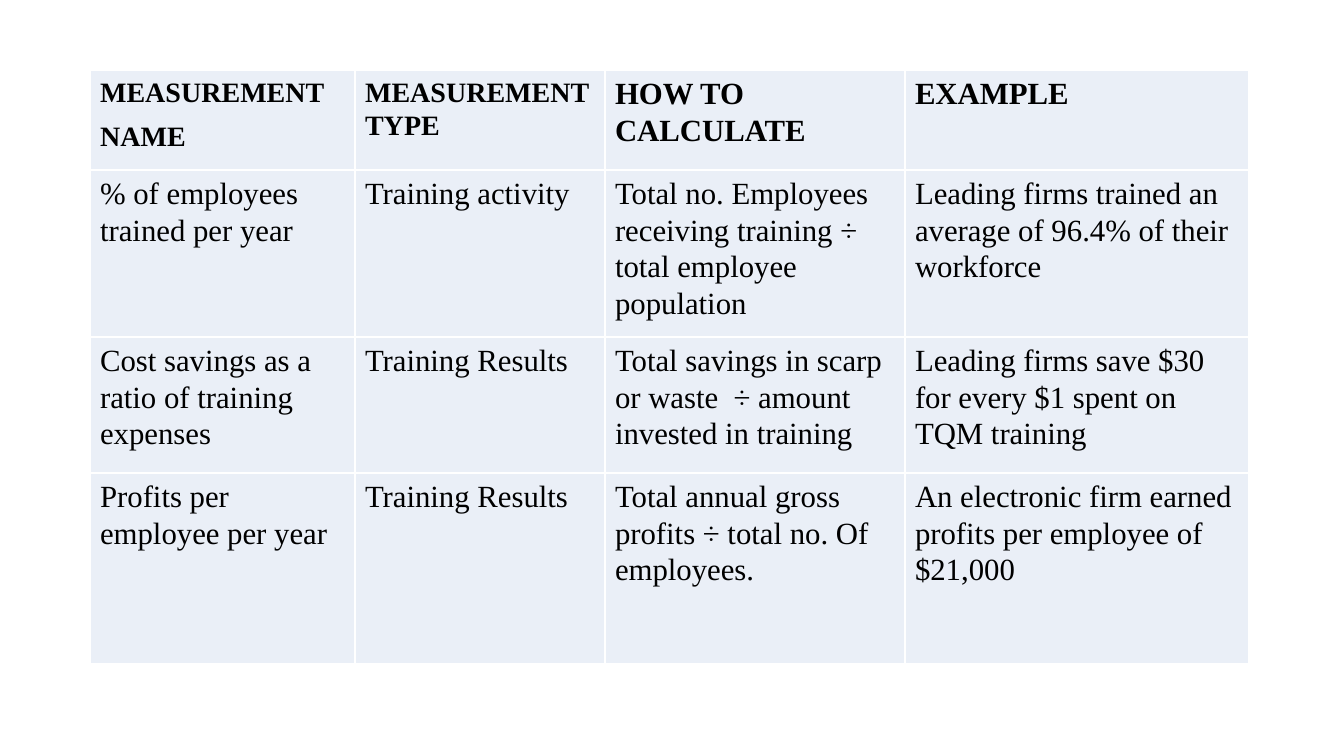
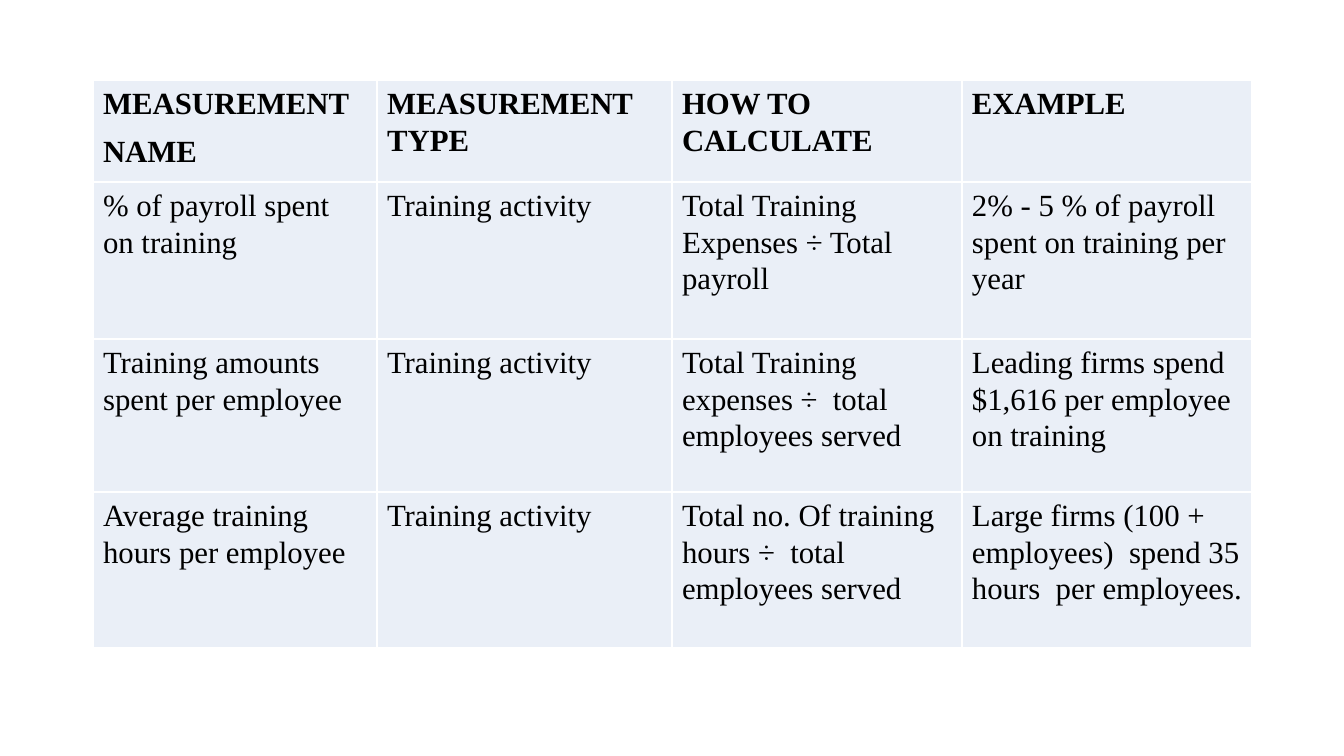
from lxml.etree import SubElement
from pptx import Presentation
from pptx.dml.color import RGBColor
from pptx.oxml.ns import qn
from pptx.util import Pt

PX = 914400 / 100.8
FONT = "Times New Roman"
TEXT_COLOUR = "000000"
CELL_COLOUR = "EAEFF7"
BORDER_COLOUR = "FFFFFF"
BODY_SIZE = 22
HEADINGS = ["MEASUREMENT\nNAME", "MEASUREMENT TYPE", "HOW TO CALCULATE", "EXAMPLE"]

TABLES = [
    {
        "left": 90,
        "top": 70,
        "columns": [265, 250, 300, 344],
        "rows": [100, 167, 136, 191],
        "heading_sizes": [20, 20, 22, 22],
        "measures": [
            ["% of employees trained per year", "Training activity",
             "Total no. Employees receiving training ÷ total employee population",
             "Leading firms trained an average of 96.4% of their workforce"],
            ["Cost savings as a ratio of training expenses", "Training Results",
             "Total savings in scarp or waste  ÷ amount invested in training",
             "Leading firms save $30 for every $1 spent on TQM training"],
            ["Profits per employee per year", "Training Results",
             "Total annual gross profits ÷ total no. Of employees.",
             "An electronic firm earned profits per employee of $21,000"],
        ],
    },
    {
        "left": 93,
        "top": 80,
        "columns": [284, 295, 290, 290],
        "rows": [102, 157, 153, 156],
        "heading_sizes": [22, 22, 22, 22],
        "measures": [
            ["% of payroll spent on training", "Training activity",
             "Total Training Expenses ÷ Total payroll",
             "2% - 5 % of payroll spent on training per year"],
            ["Training amounts spent per employee", "Training activity",
             "Total Training expenses ÷  total employees served",
             "Leading firms spend  $1,616 per employee on training"],
            ["Average training hours per employee", "Training activity",
             "Total no. Of training hours ÷  total employees served",
             "Large firms (100 + employees)  spend 35 hours  per employees."],
        ],
    },
]


def px(length):
    return round(length * PX)


def colour(value):
    return RGBColor.from_string(value)


presentation = Presentation()
presentation.slide_width = px(1344)
presentation.slide_height = px(756)

for layout in TABLES:
    slide = presentation.slides.add_slide(presentation.slide_layouts[6])
    contents = [HEADINGS] + layout["measures"]
    table = slide.shapes.add_table(
        len(contents), len(HEADINGS), px(layout["left"]), px(layout["top"]),
        px(sum(layout["columns"])), px(sum(layout["rows"])),
    ).table
    table.first_row = False
    table.horz_banding = False
    for column, width in zip(table.columns, layout["columns"]):
        column.width = px(width)

    for row_index, texts in enumerate(contents):
        table.rows[row_index].height = px(layout["rows"][row_index])
        is_heading = row_index == 0
        for column_index, text in enumerate(texts):
            cell = table.cell(row_index, column_index)
            properties = cell._tc.get_or_add_tcPr()
            for side in ("a:lnL", "a:lnR", "a:lnT", "a:lnB"):
                border = SubElement(properties, qn(side), w=str(Pt(1)))
                border_fill = SubElement(border, qn("a:solidFill"))
                SubElement(border_fill, qn("a:srgbClr"), val=BORDER_COLOUR)
            cell.fill.solid()
            cell.fill.fore_color.rgb = colour(CELL_COLOUR)

            size = layout["heading_sizes"][column_index] if is_heading else BODY_SIZE
            for line_index, line in enumerate(text.split("\n")):
                frame = cell.text_frame
                paragraph = frame.add_paragraph() if line_index else frame.paragraphs[0]
                paragraph.line_spacing = 1.07
                paragraph.space_after = Pt(8)
                run = paragraph.add_run()
                run.text = line
                run.font.name = FONT
                run.font.size = Pt(size)
                run.font.bold = is_heading
                run.font.color.rgb = colour(TEXT_COLOUR)

presentation.save("out.pptx")
